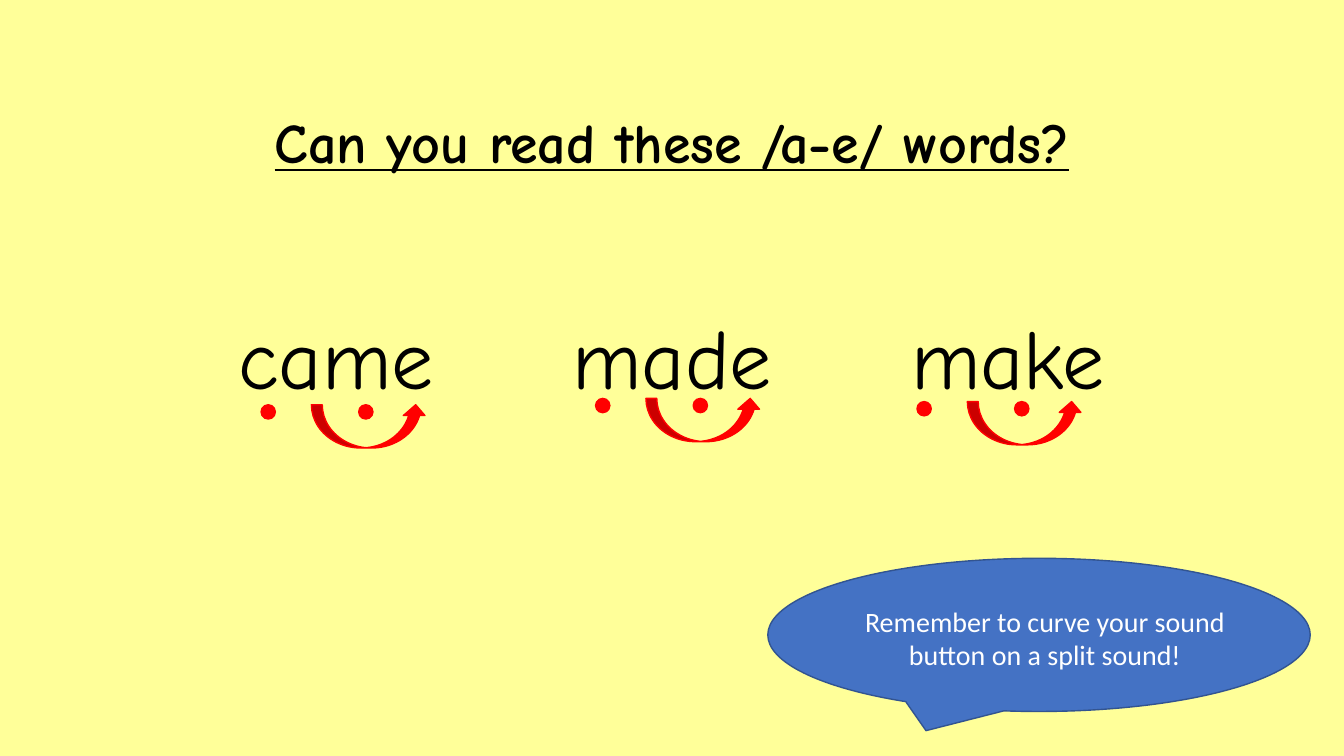
import pptx
import pptx.dml.color
import pptx.enum.shapes
import pptx.enum.text
import pptx.util

Cm, Pt = pptx.util.Cm, pptx.util.Pt
SHAPE = pptx.enum.shapes.MSO_SHAPE
ANCHOR = pptx.enum.text.MSO_ANCHOR

QUESTION = "Can you read these /a-e/ words?"
REMINDER = "Remember to curve your sound button on a split sound!"
# word, left and top of its sound buttons in cm
WORDS = [
    ("came", 6.58, 10.2),
    ("made", 15.01, 10.04),
    ("make", 23.11, 10.12),
]
# shape, offset from the first button, width, height in cm
SOUND_BUTTONS = [
    (SHAPE.OVAL, 0, 0.36, 0.36),
    (SHAPE.OVAL, 2.46, 0.36, 0.36),
    (SHAPE.CURVED_UP_ARROW, 1.27, 2.9, 1.09),
]
COLOURS = {
    "background": "FFFF99",
    "text": "000000",
    "button": "FF0000",
    "callout": "4472C4",
    "callout line": "325491",
    "callout text": "FFFFFF",
}
SLIDE_WIDTH, SLIDE_HEIGHT = 33.87, 19.05


def colour(name):
    return pptx.dml.color.RGBColor.from_string(COLOURS[name])


def write(frame, text, font, size, colour_name, anchor=ANCHOR.TOP):
    """Put one centred run into the frame and return its font."""
    frame.word_wrap = True
    frame.auto_size = pptx.enum.text.MSO_AUTO_SIZE.NONE
    frame.vertical_anchor = anchor
    paragraph = frame.paragraphs[0]
    paragraph.alignment = pptx.enum.text.PP_ALIGN.CENTER
    paragraph.line_spacing = 1.0
    run = paragraph.add_run()
    run.text = text
    run.font.name = font
    run.font.size = Pt(size)
    run.font.color.rgb = colour(colour_name)
    return run.font


def paint(shape, fill, line):
    shape.shadow.inherit = False
    shape.fill.solid()
    shape.fill.fore_color.rgb = colour(fill)
    shape.line.color.rgb = colour(line)
    shape.line.width = Pt(1)


def add_title(slide):
    title = slide.shapes.title
    title.left, title.top = Cm(0.3), Cm(2.57)
    title.width, title.height = Cm(33.27), Cm(1.95)
    font = write(title.text_frame, QUESTION, "Comic Neue", 40, "text")
    font.bold = True
    font.underline = True


def add_callout(slide):
    callout = slide.shapes.add_shape(
        SHAPE.OVAL_CALLOUT, Cm(19.35), Cm(14.07), Cm(13.67), Cm(3.86))
    paint(callout, "callout", "callout line")
    frame = callout.text_frame
    frame.margin_left, frame.margin_right = Cm(0.3), Cm(0)
    frame.margin_top, frame.margin_bottom = Cm(0.15), Cm(0)
    write(frame, REMINDER, "Calibri", 20, "callout text", ANCHOR.MIDDLE)


def add_words(slide):
    """Centre the words at equal steps across the slide, each with its buttons."""
    step = SLIDE_WIDTH / (len(WORDS) + 1)
    for index, (word, left, top) in enumerate(WORDS):
        word_box = slide.shapes.add_textbox(
            Cm(step * (index + 0.5)), Cm(7.57), Cm(step), Cm(2.79))
        write(word_box.text_frame, word, "Comic Neue", 60, "text")
        buttons = slide.shapes.add_group_shape()
        for kind, offset, width, height in SOUND_BUTTONS:
            button = buttons.shapes.add_shape(
                kind, Cm(left + offset), Cm(top), Cm(width), Cm(height))
            paint(button, "button", "button")


def main():
    deck = pptx.Presentation()
    deck.slide_width, deck.slide_height = Cm(SLIDE_WIDTH), Cm(SLIDE_HEIGHT)
    slide = deck.slides.add_slide(deck.slide_layouts[5])
    slide.background.fill.solid()
    slide.background.fill.fore_color.rgb = colour("background")
    add_title(slide)
    add_callout(slide)
    add_words(slide)
    deck.save("out.pptx")


if __name__ == "__main__":
    main()
